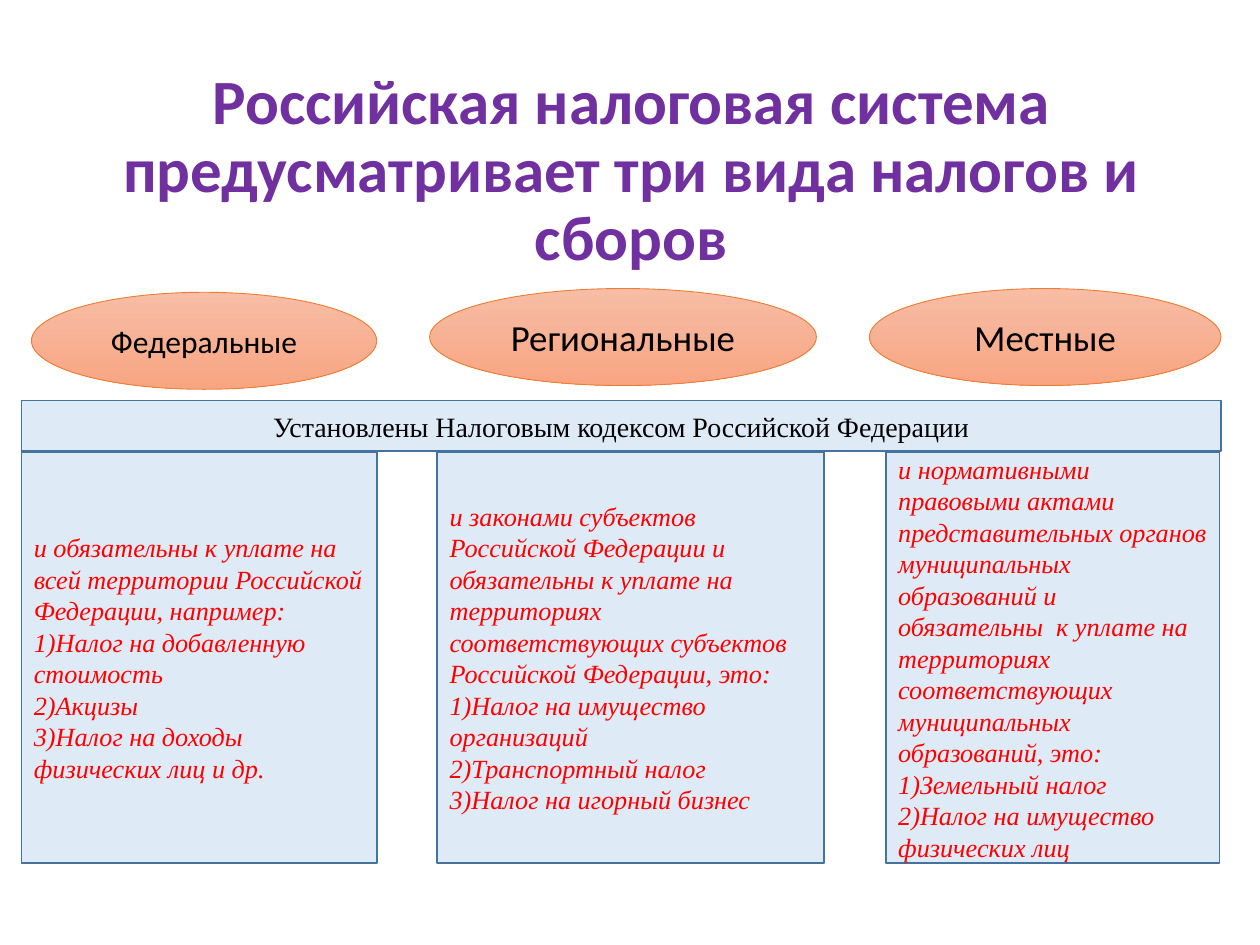
"""Build a slide on the three kinds of taxes in the Russian tax system."""
from dataclasses import dataclass

from pptx import Presentation
from pptx.dml.color import RGBColor
from pptx.enum.shapes import MSO_SHAPE
from pptx.enum.text import MSO_ANCHOR, PP_ALIGN
from pptx.util import Inches, Pt

COLORS = {
    "title": "7030A0",
    "label": "000000",
    "detail": "FF0000",
    "panel": "DEEBF7",
    "panel_line": "43739E",
    "oval_top": "F7BDA5",
    "oval_bottom": "F8A582",
    "oval_line": "ED7D31",
}
SERIF = "Times New Roman"
OVAL_HEIGHT = 0.77
BAND_LEFT, BAND_TOP, BAND_WIDTH, BAND_HEIGHT = 0.17, 3.18, 9.52, 0.4
PANEL_TOP, PANEL_HEIGHT = 3.59, 3.26


@dataclass(frozen=True)
class TaxKind:
    """One kind of tax: its oval heading and the panel below it."""
    name: str
    name_size: float
    oval_left: float
    oval_top: float
    oval_width: float
    panel_left: float
    panel_width: float
    details: tuple[str, ...]


TAX_KINDS = (
    TaxKind("Федеральные", 18, 0.25, 2.32, 2.74, 0.17, 2.82, (
        "и обязательны к уплате на всей территории Российской Федерации, например:",
        "1)Налог на добавленную стоимость",
        "2)Акцизы",
        "3)Налог на доходы физических лиц и др.",
    )),
    TaxKind("Региональные", 21, 3.41, 2.29, 3.07, 3.47, 3.07, (
        "и законами субъектов Российской Федерации и обязательны к уплате на "
        "территориях соответствующих субъектов Российской Федерации, это:",
        "1)Налог на имущество организаций",
        "2)Транспортный налог",
        "3)Налог на игорный бизнес",
    )),
    TaxKind("Местные", 21, 6.9, 2.29, 2.79, 7.03, 2.65, (
        "и нормативными правовыми актами представительных органов муниципальных "
        "образований и обязательны  к уплате на территориях соответствующих "
        "муниципальных образований, это:",
        "1)Земельный налог",
        "2)Налог на имущество физических лиц",
    )),
)


def rgb(name: str) -> RGBColor:
    """Return the named colour."""
    return RGBColor.from_string(COLORS[name])


def write(shape, *lines: str, size: float, color: str = "label",
          font: str = "Calibri", bold: bool = False, italic: bool = False,
          align=PP_ALIGN.CENTER, spacing: float = 1.0) -> None:
    """Fill a shape with one formatted paragraph per line."""
    frame = shape.text_frame
    frame.word_wrap = True
    frame.vertical_anchor = MSO_ANCHOR.MIDDLE
    for index, line in enumerate(lines):
        paragraph = frame.add_paragraph() if index else frame.paragraphs[0]
        paragraph.alignment = align
        paragraph.line_spacing = spacing
        run = paragraph.add_run()
        run.text = line
        run.font.name = font
        run.font.size = Pt(size)
        run.font.bold = bold
        run.font.italic = italic
        run.font.color.rgb = rgb(color)


def add_outlined(slide, preset, left: float, top: float, width: float,
                 height: float, line: str, weight: float):
    """Add a preset shape with a plain outline and no shadow."""
    shape = slide.shapes.add_shape(
        preset, Inches(left), Inches(top), Inches(width), Inches(height))
    shape.shadow.inherit = False
    shape.line.color.rgb = rgb(line)
    shape.line.width = Pt(weight)
    return shape


def add_panel(slide, left: float, top: float, width: float, height: float):
    """Add a pale blue rectangle."""
    panel = add_outlined(slide, MSO_SHAPE.RECTANGLE, left, top, width, height,
                         "panel_line", 1)
    panel.fill.solid()
    panel.fill.fore_color.rgb = rgb("panel")
    return panel


def add_oval(slide, kind: TaxKind) -> None:
    """Add the gradient oval that names a kind of tax."""
    oval = add_outlined(slide, MSO_SHAPE.OVAL, kind.oval_left, kind.oval_top,
                        kind.oval_width, OVAL_HEIGHT, "oval_line", 0.5)
    oval.fill.gradient()
    oval.fill.gradient_angle = 270
    for stop, color in zip(oval.fill.gradient_stops, ("oval_top", "oval_bottom")):
        stop.color.rgb = rgb(color)
    write(oval, kind.name, size=kind.name_size)


def main() -> None:
    """Build and save the slide."""
    deck = Presentation()
    deck.slide_width, deck.slide_height = Inches(10), Inches(7.5)
    slide = deck.slides.add_slide(deck.slide_layouts[6])

    title = slide.shapes.add_textbox(
        Inches(0.17), Inches(1.05), Inches(9.68), Inches(0.63))
    write(title, "Российская налоговая система предусматривает три вида налогов и сборов",
          size=36, color="title", bold=True, spacing=0.9)

    for kind in TAX_KINDS:
        add_oval(slide, kind)

    band = add_panel(slide, BAND_LEFT, BAND_TOP, BAND_WIDTH, BAND_HEIGHT)
    write(band, "Установлены Налоговым кодексом Российской Федерации",
          size=16, font=SERIF)

    for kind in TAX_KINDS:
        panel = add_panel(slide, kind.panel_left, PANEL_TOP, kind.panel_width,
                          PANEL_HEIGHT)
        write(panel, *kind.details, size=15, color="detail", font=SERIF,
              italic=True, align=PP_ALIGN.LEFT)

    deck.save("out.pptx")


if __name__ == "__main__":
    main()
